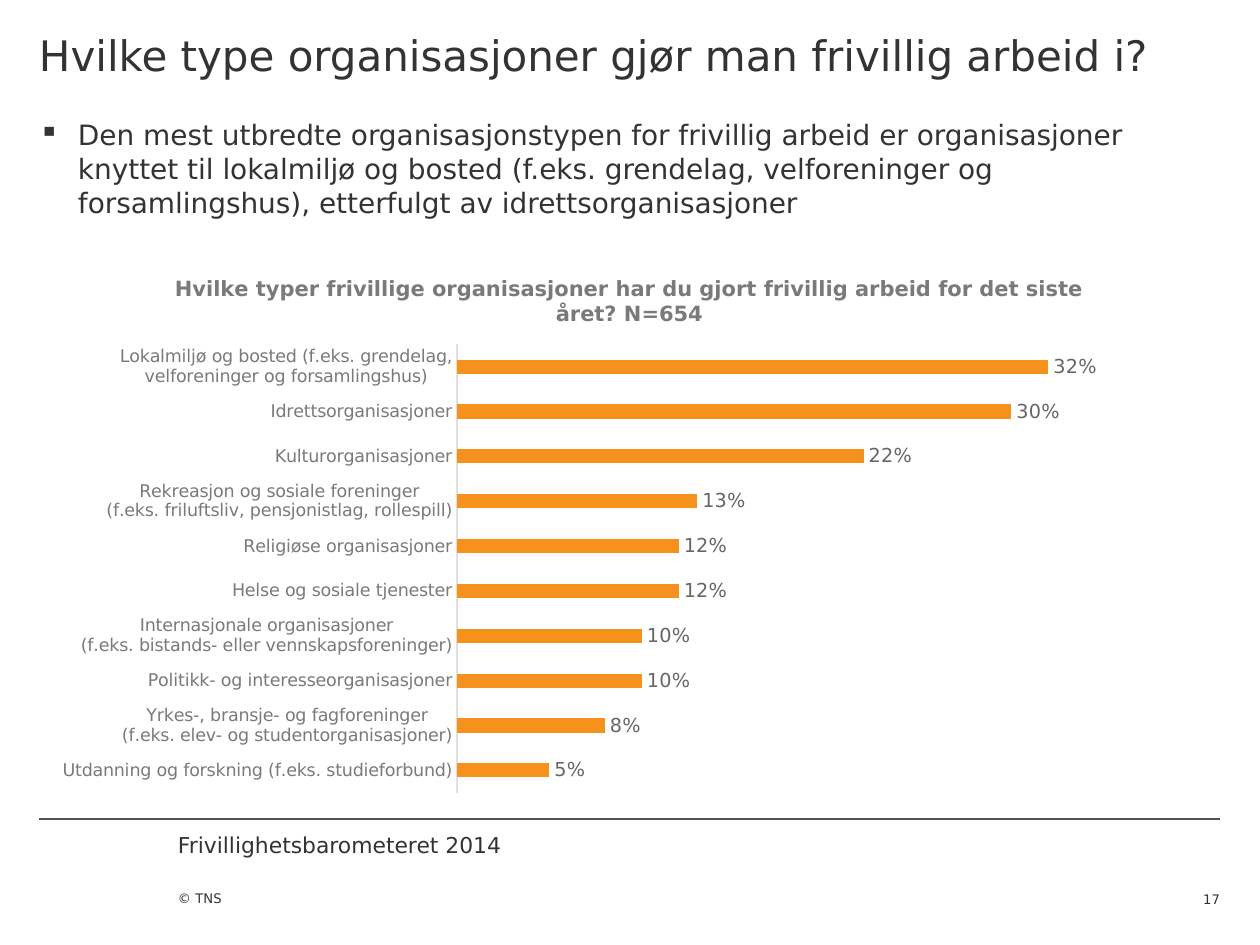
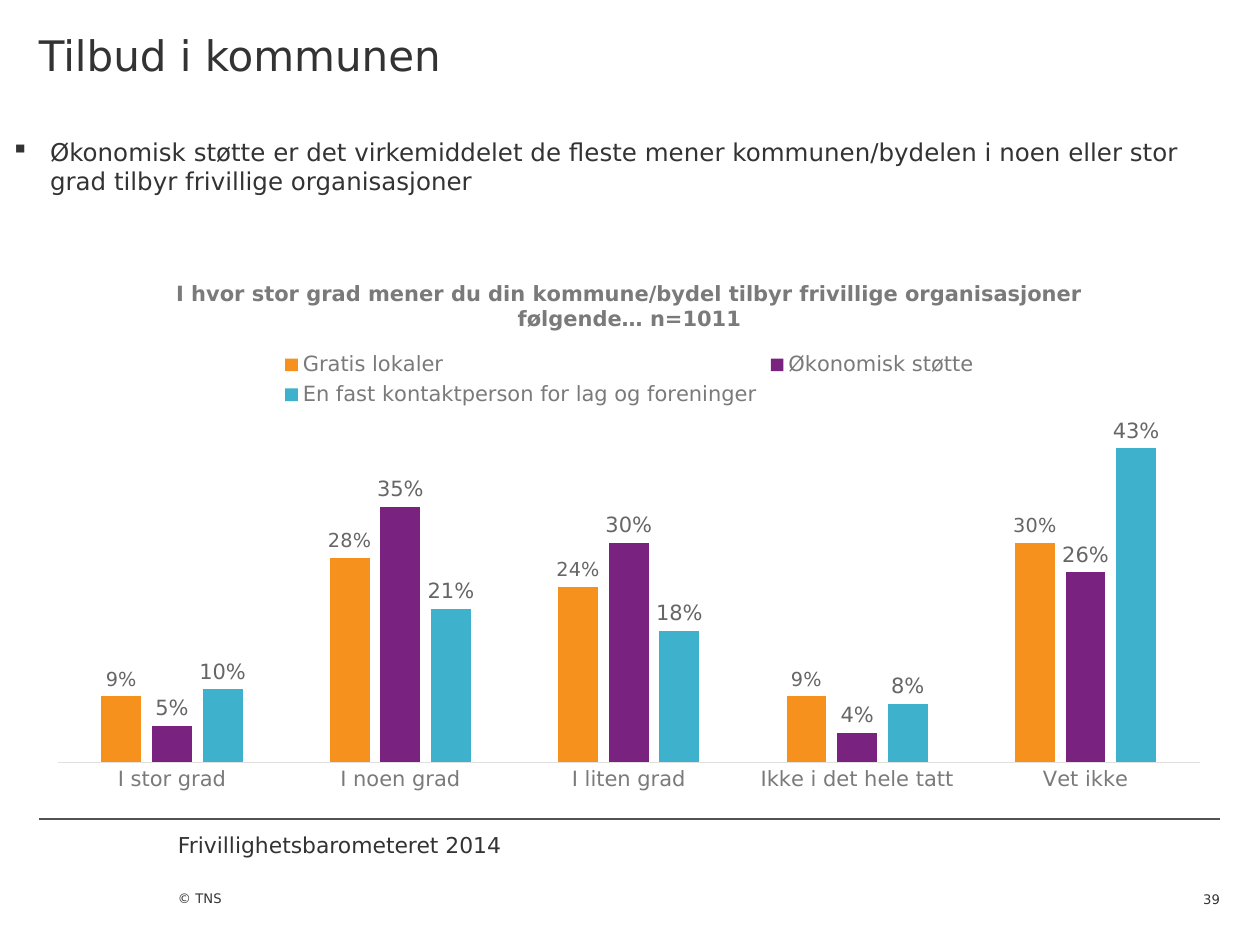
from lxml import etree
from pptx import Presentation
from pptx import util as u
from pptx.chart import data as cd
from pptx.dml import color
from pptx.enum import chart as ce, shapes, text
from pptx.oxml import ns, parse_xml

PX = 7257
FONT = "DejaVu Sans"
DARK, RULE, GREY, LABEL, AXIS = "333333", "525252", "7A7A7A", "666666", "E0E0E0"
ORANGE, PURPLE, BLUE = "F7911E", "7A2280", "3EB1CC"
TOP, BOTTOM = text.MSO_ANCHOR.TOP, text.MSO_ANCHOR.BOTTOM
LEFT, RIGHT = text.PP_ALIGN.LEFT, text.PP_ALIGN.RIGHT


def rgb(value):
    return color.RGBColor.from_string(value)


def write(sp, words, at, size, top=0, bottom=0, anchor=TOP, align=LEFT, bullet=False):
    sp.left, sp.top, sp.width, sp.height = [v * PX for v in at]
    tf = sp.text_frame
    tf.auto_size = text.MSO_AUTO_SIZE.NONE
    tf.word_wrap = True
    tf.margin_left = tf.margin_right = 0
    tf.margin_top, tf.margin_bottom = top * PX, bottom * PX
    tf.vertical_anchor = anchor
    p = tf.paragraphs[0]
    p.alignment = align
    if bullet:
        pPr = p._p.get_or_add_pPr()
        pPr.set("marL", str(39 * PX))
        pPr.set("indent", str(-39 * PX))
        etree.SubElement(pPr, ns.qn("a:buChar")).set("char", "▪")
    r = p.add_run()
    r.text = words
    r.font.name, r.font.size = FONT, u.Pt(size)
    r.font.color.rgb = rgb(DARK)


slides = [
    dict(
        title="Hvilke type organisasjoner gjør man frivillig arbeid i?",
        number="17",
        body="Den mest utbredte organisasjonstypen for frivillig arbeid er organisasjoner "
             "knyttet til lokalmiljø og bosted (f.eks. grendelag, velforeninger og "
             "forsamlingshus), etterfulgt av idrettsorganisasjoner",
        body_at=(39, 89, 1181, 105), body_size=16,
        kind=ce.XL_CHART_TYPE.BAR_CLUSTERED, chart_at=(39, 253, 1181, 551),
        chart_title="Hvilke typer frivillige organisasjoner har du gjort frivillig "
                    "arbeid for det siste året? N=654",
        cats=["Utdanning og forskning (f.eks. studieforbund)",
              "Yrkes-, bransje- og fagforeninger\n(f.eks. elev- og studentorganisasjoner)",
              "Politikk- og interesseorganisasjoner",
              "Internasjonale organisasjoner\n(f.eks. bistands- eller vennskapsforeninger)",
              "Helse og sosiale tjenester",
              "Religiøse organisasjoner",
              "Rekreasjon og sosiale foreninger\n(f.eks. friluftsliv, pensjonistlag, rollespill)",
              "Kulturorganisasjoner",
              "Idrettsorganisasjoner",
              "Lokalmiljø og bosted (f.eks. grendelag,\nvelforeninger og forsamlingshus)"],
        cat_size=10, overlap=0, top_value=0.4, plot=None,
        series=[("Frivillig arbeid", ORANGE, 11,
                 [0.05, 0.08, 0.1, 0.1, 0.12, 0.12, 0.13, 0.22, 0.3, 0.32])],
    ),
    dict(
        title="Tilbud i kommunen",
        number="39",
        body="Økonomisk støtte er det virkemiddelet de fleste mener kommunen/bydelen "
             "i noen eller stor grad tilbyr frivillige organisasjoner",
        body_at=(11, 108, 1181, 105), body_size=14,
        kind=ce.XL_CHART_TYPE.COLUMN_CLUSTERED, chart_at=(39, 258, 1181, 546),
        chart_title="I hvor stor grad mener du din kommune/bydel tilbyr frivillige "
                    "organisasjoner følgende… n=1011",
        cats=["I stor grad", "I noen grad", "I liten grad", "Ikke i det hele tatt", "Vet ikke"],
        cat_size=12, overlap=-27, top_value=0.5,
        plot=dict(x=0.016, y=0.255, w=0.967, h=0.669),
        series=[("Gratis lokaler", ORANGE, 11, [0.09, 0.28, 0.24, 0.09, 0.3]),
                ("Økonomisk støtte", PURPLE, 12, [0.05, 0.35, 0.3, 0.04, 0.26]),
                ("En fast kontaktperson for lag og foreninger", BLUE, 12,
                 [0.1, 0.21, 0.18, 0.08, 0.43])],
    ),
]

prs = Presentation()
prs.slide_width, prs.slide_height = 1260 * PX, 945 * PX

for d in slides:
    s = prs.slides.add_slide(prs.slide_layouts[5])
    write(s.shapes.title, d["title"], (39, 0, 1181, 142), 24, top=29)

    line = s.shapes.add_connector(shapes.MSO_CONNECTOR.STRAIGHT,
                                  39 * PX, 819 * PX, 1220 * PX, 819 * PX)
    line.line.color.rgb = rgb(RULE)
    line.line.width = u.Pt(0.75)
    etree.SubElement(line._element.spPr, ns.qn("a:effectLst"))

    for words, at, size, fmt in [
        ("Frivillighetsbarometeret 2014", (178, 832, 417, 53), 12.5, {}),
        ("© TNS", (178, 872, 350, 73), 7.5, dict(bottom=39, anchor=BOTTOM)),
        (d["number"], (1150, 872, 70, 35), 7.5, dict(anchor=BOTTOM, align=RIGHT)),
        (d["body"], d["body_at"], d["body_size"], dict(top=29, bullet=True)),
    ]:
        write(s.shapes.add_textbox(0, 0, PX, PX), words, at, size, **fmt)

    data = cd.CategoryChartData(number_format="0%")
    data.categories = d["cats"]
    for name, fill, size, values in d["series"]:
        data.add_series(name, values)
    chart = s.shapes.add_chart(d["kind"], *[v * PX for v in d["chart_at"]], data).chart
    chart.font.name, chart.font.size = FONT, u.Pt(10)
    chart.font.color.rgb = rgb(DARK)

    chart.has_title = True
    r = chart.chart_title.text_frame.paragraphs[0].add_run()
    r.text = d["chart_title"]
    r.font.bold = True
    chart.chart_title.include_in_layout = False

    cat, val, plot = chart.category_axis, chart.value_axis, chart.plots[0]
    cat.major_tick_mark = cat.minor_tick_mark = ce.XL_TICK_MARK.NONE
    cat.format.line.color.rgb = rgb(AXIS)
    cat.format.line.width = u.Pt(0.75)
    val.visible = False
    val.has_major_gridlines = False
    val.minimum_scale, val.maximum_scale, val.major_unit = 0, d["top_value"], 0.1
    plot.gap_width, plot.overlap = 219, d["overlap"]
    plot.vary_by_categories = False

    fonts = [(r.font, 12, GREY), (cat.tick_labels.font, d["cat_size"], GREY)]
    chart.has_legend = len(d["series"]) > 1
    if chart.has_legend:
        chart.legend.position = ce.XL_LEGEND_POSITION.TOP
        chart.legend.include_in_layout = False
        fonts.append((chart.legend.font, 12, GREY))

    for ser, (name, fill, size, values) in zip(plot.series, d["series"]):
        ser.format.fill.solid()
        ser.format.fill.fore_color.rgb = rgb(fill)
        labels = ser.data_labels
        labels.show_value = True
        labels.number_format, labels.number_format_is_linked = "0%", False
        labels.position = ce.XL_LABEL_POSITION.OUTSIDE_END
        fonts.append((labels.font, size, LABEL))

    for font, size, tone in fonts:
        font.name, font.size = FONT, u.Pt(size)
        font.color.rgb = rgb(tone)

    if d["plot"]:
        area = chart._chartSpace.chart.plotArea
        for old in area.findall(ns.qn("c:layout")):
            area.remove(old)
        sizes = "".join(f'<c:{k} val="{v}"/>' for k, v in d["plot"].items())
        area.insert(0, parse_xml(
            f'<c:layout {ns.nsdecls("c")}><c:manualLayout><c:layoutTarget val="inner"/>'
            f'<c:xMode val="edge"/><c:yMode val="edge"/>{sizes}</c:manualLayout></c:layout>'))

prs.save("out.pptx")
